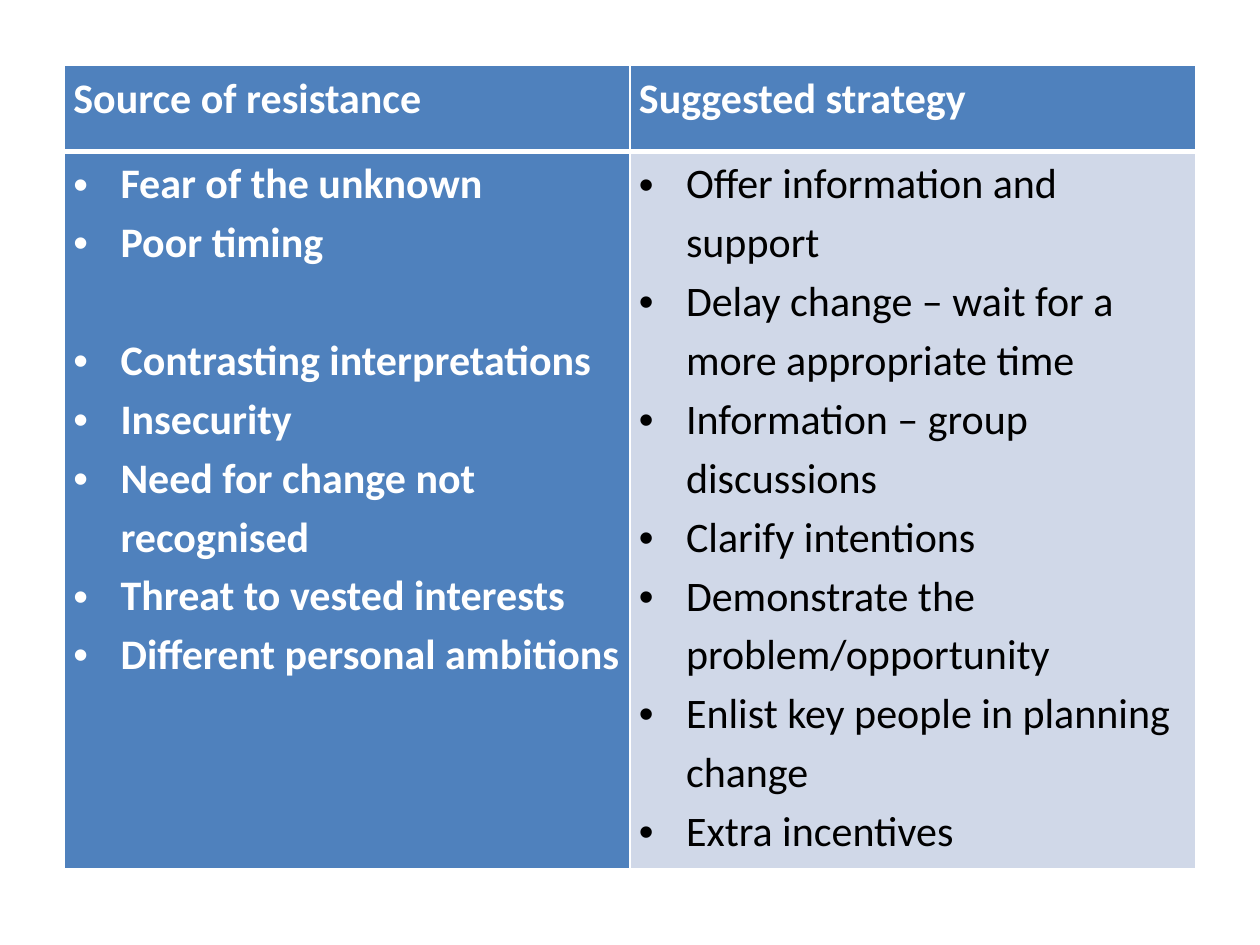
from lxml import etree
from pptx import Presentation
from pptx import util as u
from pptx.dml import color
from pptx.oxml import ns

COLORS = {"blue": "4F81BD", "pale": "D0D8E8", "white": "FFFFFF", "black": "000000"}

headings = ["Source of resistance", "Suggested strategy"]
sources = [
    "Fear of the unknown",
    "Poor timing",
    "Contrasting interpretations",
    "Insecurity",
    "Need for change not recognised",
    "Threat to vested interests",
    "Different personal ambitions",
]
strategies = [
    "Offer information and support",
    "Delay change – wait for a more appropriate time",
    "Information – group discussions",
    "Clarify intentions",
    "Demonstrate the problem/opportunity",
    "Enlist key people in planning change",
    "Extra incentives",
]


def rgb(name):
    return color.RGBColor.from_string(COLORS[name])


def add_border(cell, side, points):
    line = etree.SubElement(cell._tc.get_or_add_tcPr(), ns.qn(f"a:ln{side}"), w=str(u.Pt(points)))
    fill = etree.SubElement(line, ns.qn("a:solidFill"))
    etree.SubElement(fill, ns.qn("a:srgbClr"), val=COLORS["white"])


prs = Presentation()
prs.slide_width, prs.slide_height = u.Cm(25.4), u.Cm(19.05)
slide = prs.slides.add_slide(prs.slide_layouts[6])

resistance = slide.shapes.add_table(2, 2, u.Cm(1.3), u.Cm(1.32), u.Cm(22.8), u.Cm(16.2)).table
resistance.first_col = True
resistance.rows[0].height = u.Cm(1.73)
resistance.rows[1].height = u.Cm(14.47)

contents = [[[heading] for heading in headings], [sources, strategies]]
for row, row_contents in enumerate(contents):
    for col, lines in enumerate(row_contents):
        is_strategy = row == 1 and col == 1
        cell = resistance.cell(row, col)
        cell.margin_left = cell.margin_right = u.Cm(0.18)
        cell.margin_top = cell.margin_bottom = 0
        for side in "LRTB":
            add_border(cell, side, 3 if row == 0 and side == "B" else 1)
        cell.fill.solid()
        cell.fill.fore_color.rgb = rgb("pale" if is_strategy else "blue")

        for index, line in enumerate(lines):
            frame = cell.text_frame
            paragraph = frame.add_paragraph() if index else frame.paragraphs[0]
            paragraph.text = line
            paragraph.line_spacing = 1.15
            if line == "Poor timing":
                paragraph.space_after = u.Pt(33.6)
            if row == 1:
                props = paragraph._p.get_or_add_pPr()
                props.set("marL", str(u.Cm(0.95)))
                props.set("indent", str(-u.Cm(0.95)))
                etree.SubElement(props, ns.qn("a:buFont"), typeface="Arial")
                etree.SubElement(props, ns.qn("a:buChar"), char="•")
            paragraph.font.name = "Calibri"
            paragraph.font.size = u.Pt(24)
            paragraph.font.bold = not is_strategy
            paragraph.font.color.rgb = rgb("black" if is_strategy else "white")

prs.save("out.pptx")
